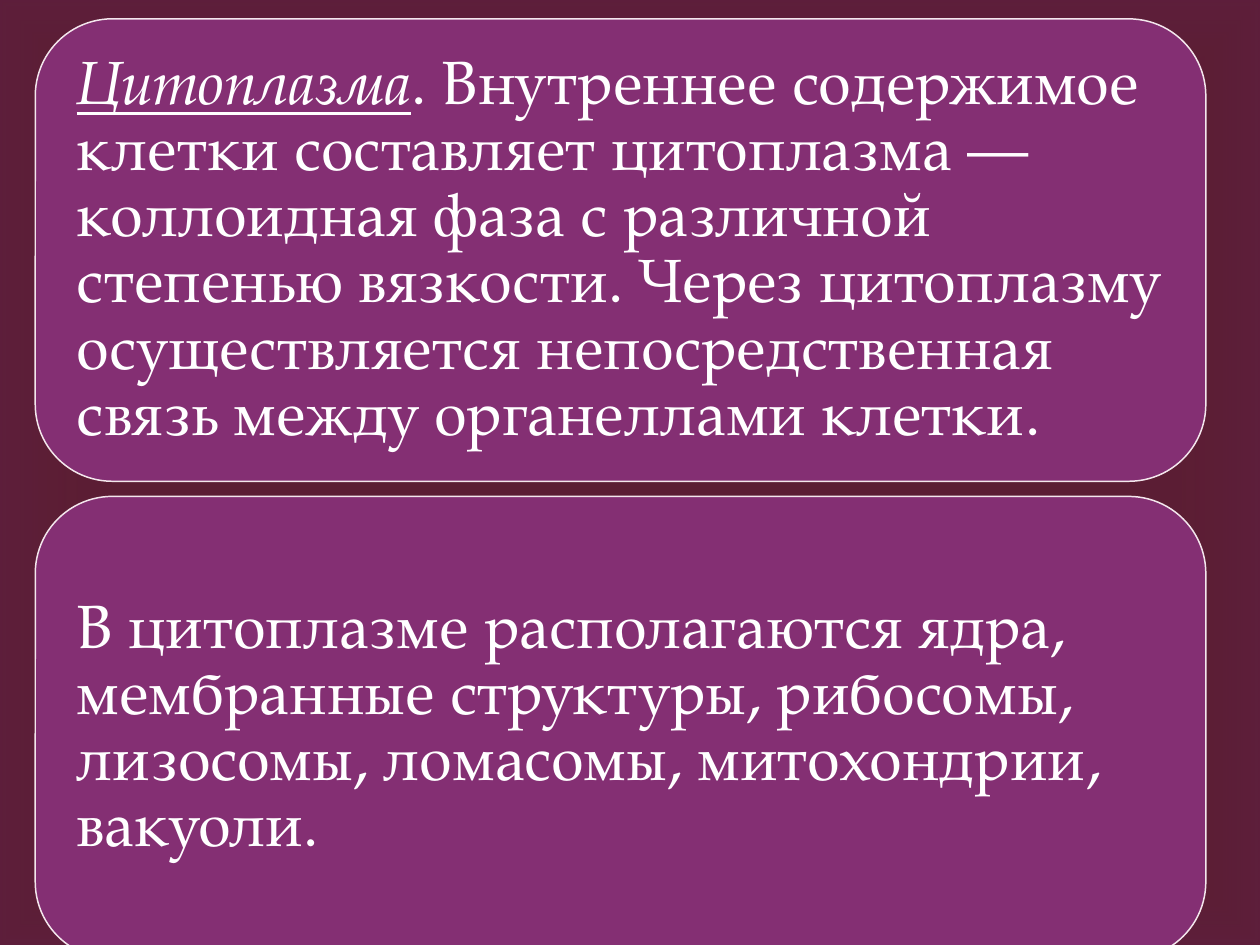
from lxml import etree
from pptx import Presentation
from pptx.dml.color import RGBColor
from pptx.enum.shapes import MSO_SHAPE
from pptx.enum.text import MSO_ANCHOR, PP_ALIGN
from pptx.oxml.ns import qn
from pptx.util import Inches, Pt

RECTANGLE, ROUNDED = MSO_SHAPE.RECTANGLE, MSO_SHAPE.ROUNDED_RECTANGLE
MIDDLE, LEFT = MSO_ANCHOR.MIDDLE, PP_ALIGN.LEFT

# Each panel is a list of (text, format) runs.
PANELS = [
    [
        ("Цитоплазма", {"italic": True, "underline": True}),
        (". Внутреннее содержимое клетки составляет цитоплазма — коллоидная "
         "фаза с различной степенью вязкости. Через цитоплазму осуществляется "
         "непосредственная связь между органеллами клетки.", {}),
    ],
    [
        ("В цитоплазме располагаются ядра, мембранные структуры, рибосомы, "
         "лизосомы, ломасомы, митохондрии, вакуоли.", {}),
    ],
]
BACKGROUND, PANEL_FILL, PANEL_LINE, TEXT = "5C1E34", "842F73", "F4E7ED", "FFFFFF"
VIGNETTE = [(83, BACKGROUND, 11), (100, "632356", 23)]  # position, colour, opacity in %
FONT = {"name": "TeX Gyre Pagella", "size": Pt(35)}

SLIDE_WIDTH, SLIDE_HEIGHT = 10, 7.5
LEFT_EDGE, TOP_EDGE = 0.28, 0.15
PANEL_WIDTH, PANEL_HEIGHT, GAP = 9.29, 3.67, 0.12
INSET = 0.15


def color(value):
    return RGBColor.from_string(value)


def add_shape(slide, kind, *box):
    shape = slide.shapes.add_shape(kind, *map(Inches, box))
    shape.shadow.inherit = False
    return shape


def add_vignette(slide):
    """Cover the slide with a faint gradient spreading from its centre."""
    shape = add_shape(slide, RECTANGLE, 0, 0, SLIDE_WIDTH, SLIDE_HEIGHT)
    shape.line.fill.background()
    shape.fill.gradient()
    gradient = shape.element.spPr.find(qn("a:gradFill"))
    for child in list(gradient):
        gradient.remove(child)
    stops = etree.SubElement(gradient, qn("a:gsLst"))
    for position, value, opacity in VIGNETTE:
        stop = etree.SubElement(stops, qn("a:gs"), pos=str(position * 1000))
        tint = etree.SubElement(stop, qn("a:srgbClr"), val=value)
        etree.SubElement(tint, qn("a:alpha"), val=str(opacity * 1000))
    centre = etree.SubElement(gradient, qn("a:path"), path="rect")
    etree.SubElement(centre, qn("a:fillToRect"), dict.fromkeys("ltrb", "50000"))


def add_panel(slide, row, runs):
    top = TOP_EDGE + row * (PANEL_HEIGHT + GAP)
    panel = add_shape(slide, ROUNDED, LEFT_EDGE, top, PANEL_WIDTH, PANEL_HEIGHT)
    panel.fill.solid()
    panel.fill.fore_color.rgb = color(PANEL_FILL)
    panel.line.color.rgb = color(PANEL_LINE)
    panel.line.width = Pt(0.85)

    frame = panel.text_frame
    frame.word_wrap = True
    frame.vertical_anchor = MIDDLE
    for side in ("left", "top", "right", "bottom"):
        setattr(frame, f"margin_{side}", Inches(INSET))
    paragraph = frame.paragraphs[0]
    paragraph.alignment = LEFT
    paragraph.line_spacing = 0.9
    paragraph.space_after = Pt(12)
    for text, style in runs:
        run = paragraph.add_run()
        run.text = text
        run.font.color.rgb = color(TEXT)
        for name, value in {**FONT, **style}.items():
            setattr(run.font, name, value)


def main():
    presentation = Presentation()
    presentation.slide_width = Inches(SLIDE_WIDTH)
    presentation.slide_height = Inches(SLIDE_HEIGHT)
    slide = presentation.slides.add_slide(presentation.slide_layouts[6])
    slide.background.fill.solid()
    slide.background.fill.fore_color.rgb = color(BACKGROUND)
    add_vignette(slide)
    for row, runs in enumerate(PANELS):
        add_panel(slide, row, runs)
    presentation.save("out.pptx")


if __name__ == "__main__":
    main()
